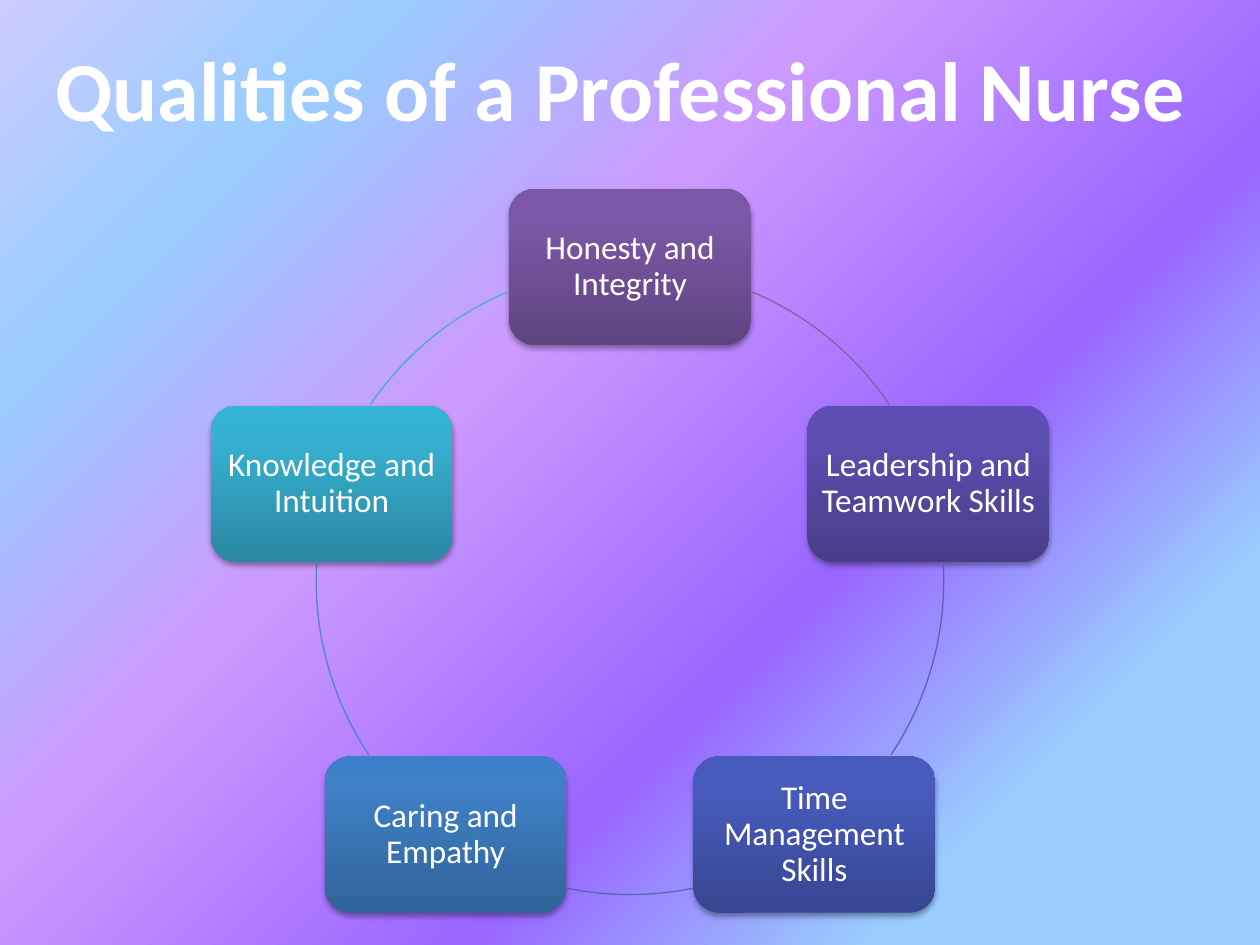
from math import cos, radians, sin

from lxml import etree
from pptx import Presentation
from pptx.dml.color import RGBColor
from pptx.enum.shapes import MSO_SHAPE
from pptx.enum.text import MSO_ANCHOR, PP_ALIGN
from pptx.oxml import parse_xml
from pptx.oxml.ns import nsdecls, qn
from pptx.util import Inches, Pt

ROUND_RECT, ARC = MSO_SHAPE.ROUNDED_RECTANGLE, MSO_SHAPE.ARC
MIDDLE, TOP, CENTER = MSO_ANCHOR.MIDDLE, MSO_ANCHOR.TOP, PP_ALIGN.CENTER
WHITE = RGBColor(0xFF, 0xFF, 0xFF)

TITLE = "Qualities of a Professional Nurse "
# text, gradient colours from bottom to top, colour of the arc that follows
QUALITIES = [
    ("Honesty and Integrity", ("5F4480", "7B58A6", "7C57A8"), RGBColor(0x80, 0x64, 0xA2)),
    ("Leadership and Teamwork Skills", ("483D89", "5D4FB1", "5C4EB4"), RGBColor(0x68, 0x5D, 0xAB)),
    ("Time Management Skills", ("374691", "475BBC", "455ABF"), RGBColor(0x57, 0x67, 0xB4)),
    ("Caring and Empathy", ("306399", "3F80C7", "3C80CB"), RGBColor(0x51, 0x85, 0xBD)),
    ("Knowledge and Intuition", ("2A88A2", "37B1D2", "34B4D6"), RGBColor(0x4B, 0xAC, 0xC6)),
]
ARC_ANGLES = [(293, 325.8), (357, 33.7), (78.4, 101.6), (146.3, 183), (214.2, 247)]
BACKGROUND = [(18, "99CCFF"), (36, "9966FF"), (61, "CC99FF"), (82, "99CCFF"), (100, "CCCCFF")]

CX, CY, RADIUS = 5, 4.61, 2.49
BOX_W, BOX_H = 1.92, 1.24
TITLE_FONT = {"name": "Calibri", "size": Pt(48), "bold": True}
BOX_FONT = {"name": "Calibri", "size": Pt(19), "bold": False}

UPWARD = '<a:lin ang="16200000" scaled="0"/>'
FROM_CORNER = ('<a:path path="circle"><a:fillToRect l="100000" t="100000"/></a:path>'
               '<a:tileRect r="-100000" b="-100000"/>')
SHADOW = (f'<a:effectLst {nsdecls("a")}><a:outerShdw blurRad="39370" dist="22860" dir="5400000" '
          'rotWithShape="0"><a:srgbClr val="000000"><a:alpha val="35000"/></a:srgbClr>'
          '</a:outerShdw></a:effectLst>')


def set_gradient(fill, parent, stops, direction):
    """Give parent a gradient fill in place of a solid one."""
    fill.solid()
    gs = "".join(f'<a:gs pos="{pos * 1000}"><a:srgbClr val="{color}"/></a:gs>'
                 for pos, color in stops)
    gradient = parse_xml(f'<a:gradFill {nsdecls("a")} rotWithShape="1"><a:gsLst>{gs}</a:gsLst>'
                         f'{direction}</a:gradFill>')
    solid = next(parent.iter(qn("a:solidFill")))
    solid.getparent().replace(solid, gradient)


def write(sp, text, font, anchor, margin_x, margin_y):
    tf = sp.text_frame
    tf.word_wrap = True
    tf.vertical_anchor = anchor
    tf.margin_left = tf.margin_right = Inches(margin_x)
    tf.margin_top = tf.margin_bottom = Inches(margin_y)
    p = tf.paragraphs[0]
    p.alignment = CENTER
    r = p.add_run()
    r.text = text
    for name, value in font.items():
        setattr(r.font, name, value)
    r.font.color.rgb = WHITE
    return p


def add_box(slide, x, y, text, colors):
    sp = slide.shapes.add_shape(ROUND_RECT, Inches(x - BOX_W / 2), Inches(y - BOX_H / 2),
                                Inches(BOX_W), Inches(BOX_H))
    set_gradient(sp.fill, sp._element.spPr, zip((0, 80, 100), colors), UPWARD)
    sp.line.fill.background()
    etree.SubElement(sp._element.spPr, qn("a:effectLst"))
    effects = sp._element.spPr.find(qn("a:effectLst"))
    sp._element.spPr.replace(effects, parse_xml(SHADOW))
    write(sp, text, BOX_FONT, MIDDLE, 0.02, 0.02).line_spacing = 0.9


def add_arc(slide, angles, color):
    sp = slide.shapes.add_shape(ARC, Inches(CX - RADIUS), Inches(CY - RADIUS),
                                Inches(2 * RADIUS), Inches(2 * RADIUS))
    for i, angle in enumerate(angles):
        sp.adjustments[i] = angle * 0.6  # 60000 units a degree, scaled by 100000
    sp.shadow.inherit = False
    sp.fill.background()
    sp.line.color.rgb = color
    sp.line.width = Pt(0.75)


def main():
    prs = Presentation()
    prs.slide_width, prs.slide_height = Inches(10), Inches(7.5)
    slide = prs.slides.add_slide(prs.slide_layouts[5])
    set_gradient(slide.background.fill, slide._element.cSld, BACKGROUND, FROM_CORNER)

    for i, (text, colors, arc_color) in enumerate(QUALITIES):
        angle = radians(-90 + i * 360 / len(QUALITIES))
        add_box(slide, CX + RADIUS * cos(angle), CY + RADIUS * sin(angle), text, colors)
        add_arc(slide, ARC_ANGLES[i], arc_color)

    title = slide.shapes.title
    title.left, title.top = Inches(0), Inches(0.25)
    title.width, title.height = Inches(10), Inches(0.91)
    write(title, TITLE, TITLE_FONT, TOP, 0.1, 0.05)
    prs.save("out.pptx")


if __name__ == "__main__":
    main()
